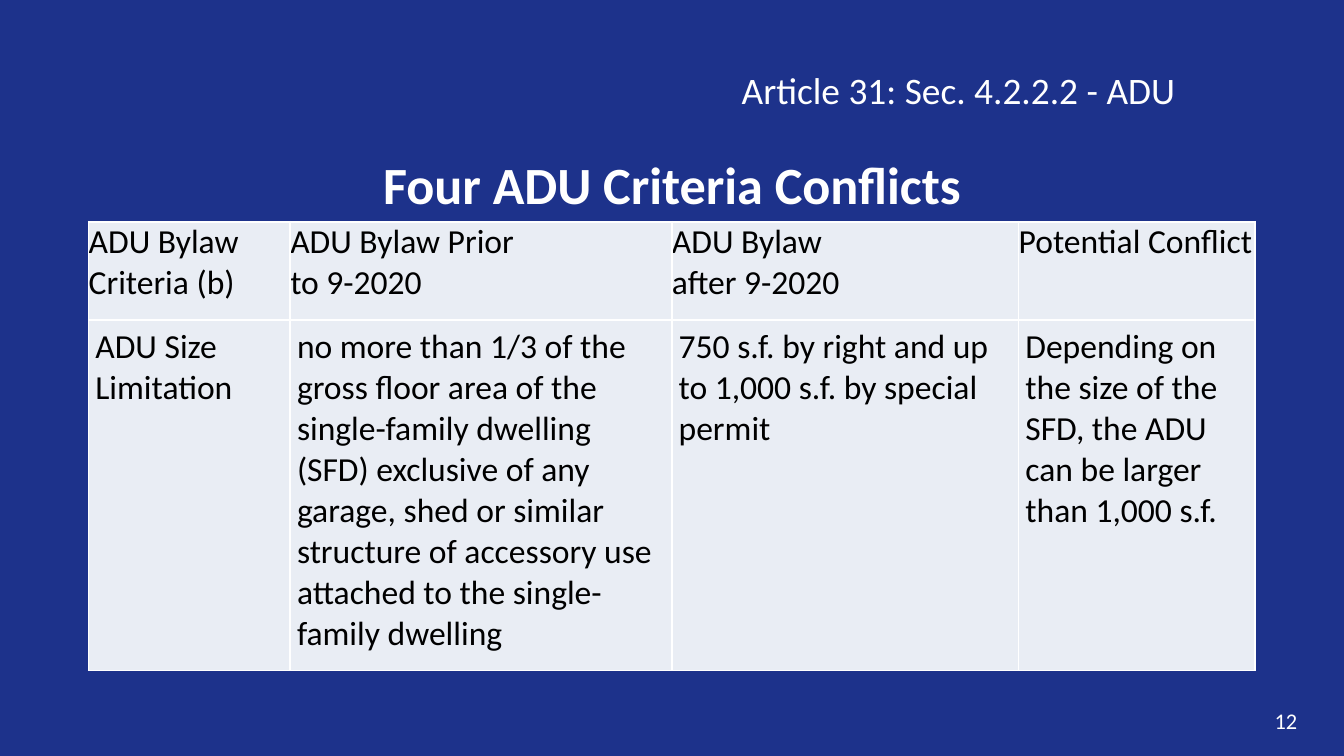
from lxml import etree
from pptx import Presentation
from pptx.dml.color import RGBColor
from pptx.enum.text import MSO_ANCHOR, PP_ALIGN
from pptx.oxml.ns import qn
from pptx.util import Inches, Pt

LEFT, CENTER, RIGHT = PP_ALIGN.LEFT, PP_ALIGN.CENTER, PP_ALIGN.RIGHT
TOP, MIDDLE = MSO_ANCHOR.TOP, MSO_ANCHOR.MIDDLE
NAVY, WHITE, BLACK, PALE = "1D328B", "FFFFFF", "000000", "E9EDF4"


def color(hex_value):
    return RGBColor.from_string(hex_value)


def write(text_frame, text, size, hex_value, alignment=LEFT, bold=False):
    text_frame.word_wrap = True
    text_frame.text = text
    for paragraph in text_frame.paragraphs:
        paragraph.alignment = alignment
        for run in paragraph.runs:
            run.font.name = "Calibri"
            run.font.size = Pt(size)
            run.font.bold = bold
            run.font.color.rgb = color(hex_value)


presentation = Presentation()
presentation.slide_width = Inches(10)
presentation.slide_height = Inches(10 * 9 / 16)
slide = presentation.slides.add_slide(presentation.slide_layouts[6])
slide.background.fill.solid()
slide.background.fill.fore_color.rgb = color(NAVY)

text_boxes = [
    ("Four ADU Criteria Conflicts", (0.5, 0.9, 9, 0.94), 28, CENTER, MIDDLE, True),
    ("12", (9.34, 5.21, 0.41, 0.3), 12, RIGHT, MIDDLE, False),
    ("Article 31: Sec. 4.2.2.2 - ADU", (5.42, 0.45, 4.08, 0.44), 20, LEFT, TOP, False),
]
for text, box, size, alignment, anchor, bold in text_boxes:
    text_box = slide.shapes.add_textbox(*map(Inches, box))
    text_box.text_frame.vertical_anchor = anchor
    write(text_box.text_frame, text, size, WHITE, alignment, bold)

rows = [
    [
        "ADU Bylaw Criteria (b)",
        "ADU Bylaw Prior\nto 9-2020",
        "ADU Bylaw\nafter 9-2020",
        "Potential Conflict",
    ],
    [
        "ADU Size Limitation",
        "no more than 1/3 of the gross floor area of the single-family dwelling "
        "(SFD) exclusive of any garage, shed or similar structure of accessory use "
        "attached to the single- family dwelling",
        "750 s.f. by right and up to 1,000 s.f. by special permit",
        "Depending on the size of the SFD, the ADU can be larger than 1,000 s.f.",
    ],
]
column_widths = [1.5, 2.84, 2.58, 1.76]
row_heights = [0.73, 2.61]
row_margins = [0, 0.05]

table = slide.shapes.add_table(
    len(rows), len(column_widths),
    Inches(0.66), Inches(1.65), Inches(sum(column_widths)), Inches(sum(row_heights)),
).table
table.first_row = False
table.horz_banding = False
for column, width in zip(table.columns, column_widths):
    column.width = Inches(width)

for row, texts, height, margin in zip(table.rows, rows, row_heights, row_margins):
    row.height = Inches(height)
    for cell, text in zip(row.cells, texts):
        write(cell.text_frame, text, 18, BLACK)
        cell.margin_left = cell.margin_right = Inches(margin)
        cell.margin_top = cell.margin_bottom = Inches(margin)
        properties = cell._tc.get_or_add_tcPr()
        for side in ("a:lnL", "a:lnR", "a:lnT", "a:lnB"):
            border = etree.SubElement(properties, qn(side), w=str(Pt(1)))
            border_fill = etree.SubElement(border, qn("a:solidFill"))
            etree.SubElement(border_fill, qn("a:srgbClr"), val=WHITE)
        cell.fill.solid()
        cell.fill.fore_color.rgb = color(PALE)

presentation.save("out.pptx")
